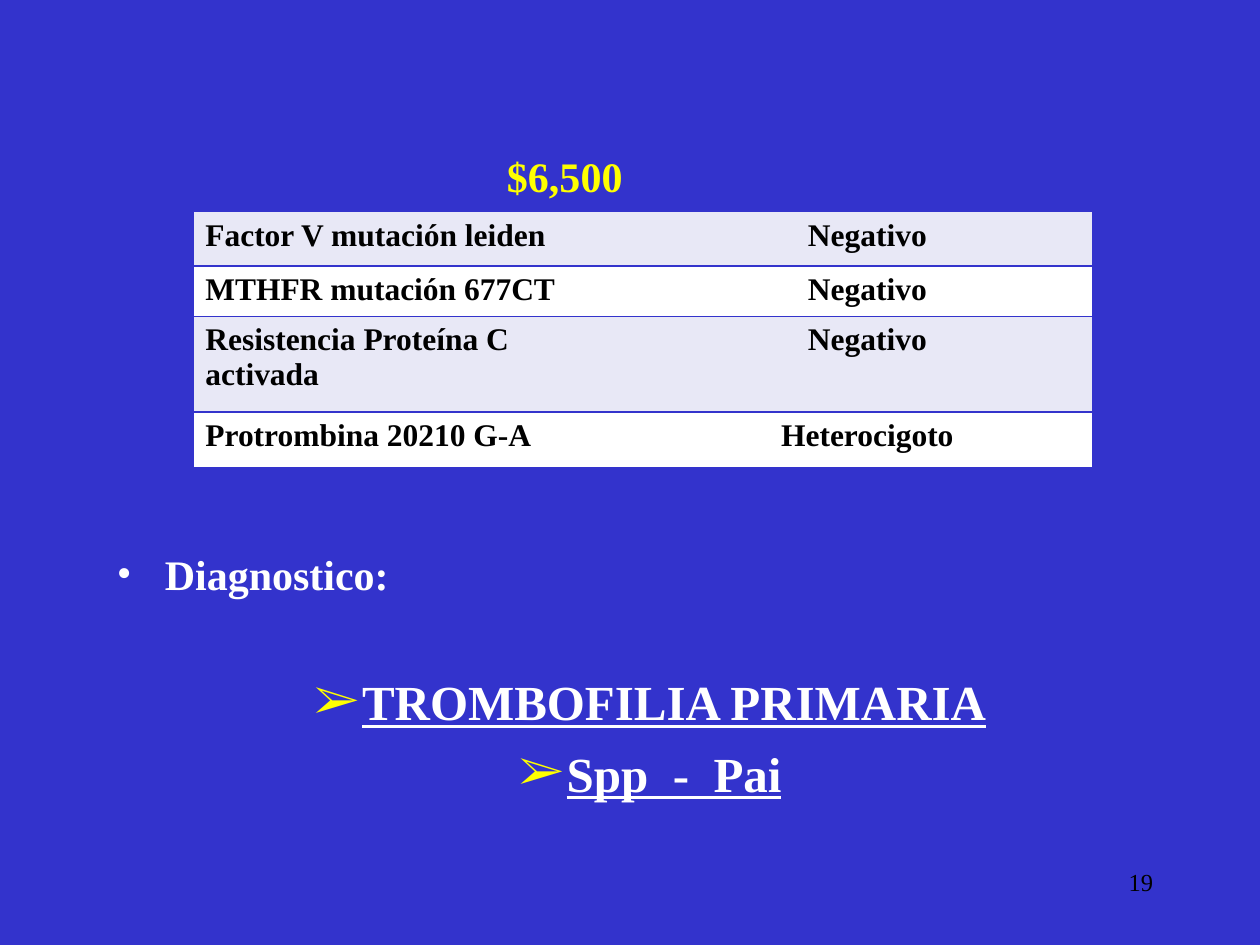
from lxml.etree import SubElement
from pptx import Presentation
from pptx.dml.color import RGBColor
from pptx.enum.text import PP_ALIGN
from pptx.oxml.ns import qn
from pptx.util import Inches, Pt

BLUE = RGBColor(0x33, 0x33, 0xCC)
YELLOW = RGBColor(0xFF, 0xFF, 0x00)
WHITE = RGBColor(0xFF, 0xFF, 0xFF)
BLACK = RGBColor(0x00, 0x00, 0x00)
LAVENDER = RGBColor(0xE8, 0xE8, 0xF6)
FONT = "Times New Roman"

RESULTS = [
    ("Factor V mutación leiden", "Negativo"),
    ("MTHFR mutación 677CT", "Negativo"),
    ("Resistencia Proteína C activada", "Negativo"),
    ("Protrombina 20210 G-A", "Heterocigoto"),
]
ROW_HEIGHTS = [0.6, 0.43, 0.38, 0.76, 0.44]
DIAGNOSIS = [
    ("Diagnostico:", "•", WHITE, 0, PP_ALIGN.LEFT, dict(size=Pt(24))),
    ("TROMBOFILIA PRIMARIA", "➢", YELLOW, 42, PP_ALIGN.CENTER,
     dict(size=Pt(28), underline=True)),
    ("Spp  -  Pai", "➢", YELLOW, 7, PP_ALIGN.CENTER,
     dict(size=Pt(28), underline=True)),
]


def write(p, text, color, align=PP_ALIGN.LEFT, **fmt):
    """Put one formatted run in a paragraph."""
    p.alignment = align
    r = p.add_run()
    r.text = text
    for name, value in {"name": FONT, "bold": True, **fmt}.items():
        setattr(r.font, name, value)
    r.font.color.rgb = color


def set_borders(cell, visible):
    """Draw the named sides of a cell in the background blue and hide the rest."""
    tc_pr = cell._tc.get_or_add_tcPr()
    for side in "LRTB":
        ln = SubElement(tc_pr, qn(f"a:ln{side}"), w=str(Pt(1)))
        if side in visible:
            fill = SubElement(ln, qn("a:solidFill"))
            SubElement(fill, qn("a:srgbClr"), val=str(BLUE))
        else:
            SubElement(ln, qn("a:noFill"))


def set_bullet(p, char, color):
    """Give a paragraph a hanging coloured bullet."""
    p_pr = p._p.get_or_add_pPr()
    p_pr.set("marL", str(Inches(0.38)))
    p_pr.set("indent", str(Inches(-0.38)))
    bu_clr = SubElement(p_pr, qn("a:buClr"))
    SubElement(bu_clr, qn("a:srgbClr"), val=str(color))
    SubElement(p_pr, qn("a:buFont"), typeface=FONT)
    SubElement(p_pr, qn("a:buChar"), char=char)


def add_results(s, x, y, w, h):
    """Add the table of results under its price heading."""
    table = s.shapes.add_table(len(ROW_HEIGHTS), 2, x, y, w, h).table
    for row, height in zip(table.rows, ROW_HEIGHTS):
        row.height = Inches(height)
    for i, texts in enumerate([("$6,500", ""), *RESULTS]):
        for j, text in enumerate(texts):
            cell = table.cell(i, j)
            set_borders(cell, "TB" + "LR"[j])
            cell.fill.solid()
            cell.fill.fore_color.rgb = BLUE if i == 0 else (WHITE, LAVENDER)[i % 2]
            p = cell.text_frame.paragraphs[0]
            if i:
                align = PP_ALIGN.CENTER if j else PP_ALIGN.LEFT
                write(p, text, BLACK, align, size=Pt(18))
            elif text:
                cell.margin_top = cell.margin_right = Inches(0.16)
                write(p, text, YELLOW, PP_ALIGN.RIGHT, size=Pt(24))


def add_diagnosis(s, x, y, w, h):
    """Add the bulleted diagnosis."""
    tf = s.shapes.add_textbox(x, y, w, h).text_frame
    tf.word_wrap = True
    for i, (text, char, color, before, align, fmt) in enumerate(DIAGNOSIS):
        p = tf.add_paragraph() if i else tf.paragraphs[0]
        p.space_before = Pt(before)
        set_bullet(p, char, color)
        write(p, text, WHITE, align, **fmt)


def add_page_number(s, x, y, w, h):
    """Add the page number."""
    tf = s.shapes.add_textbox(x, y, w, h).text_frame
    tf.word_wrap = True
    write(tf.paragraphs[0], "19", BLACK, PP_ALIGN.RIGHT, size=Pt(14), bold=False)


def main():
    """Build and save the slide."""
    prs = Presentation()
    prs.slide_width, prs.slide_height = Inches(10), Inches(7.5)
    s = prs.slides.add_slide(prs.slide_layouts[6])
    s.background.fill.solid()
    s.background.fill.fore_color.rgb = BLUE
    add_diagnosis(s, Inches(0.83), Inches(4.3), Inches(8.66), Inches(2.68))
    add_page_number(s, Inches(7.17), Inches(6.83), Inches(2.08), Inches(0.5))
    add_results(s, Inches(1.53), Inches(1.07), Inches(7.14), Inches(2.61))
    prs.save("out.pptx")


if __name__ == "__main__":
    main()
